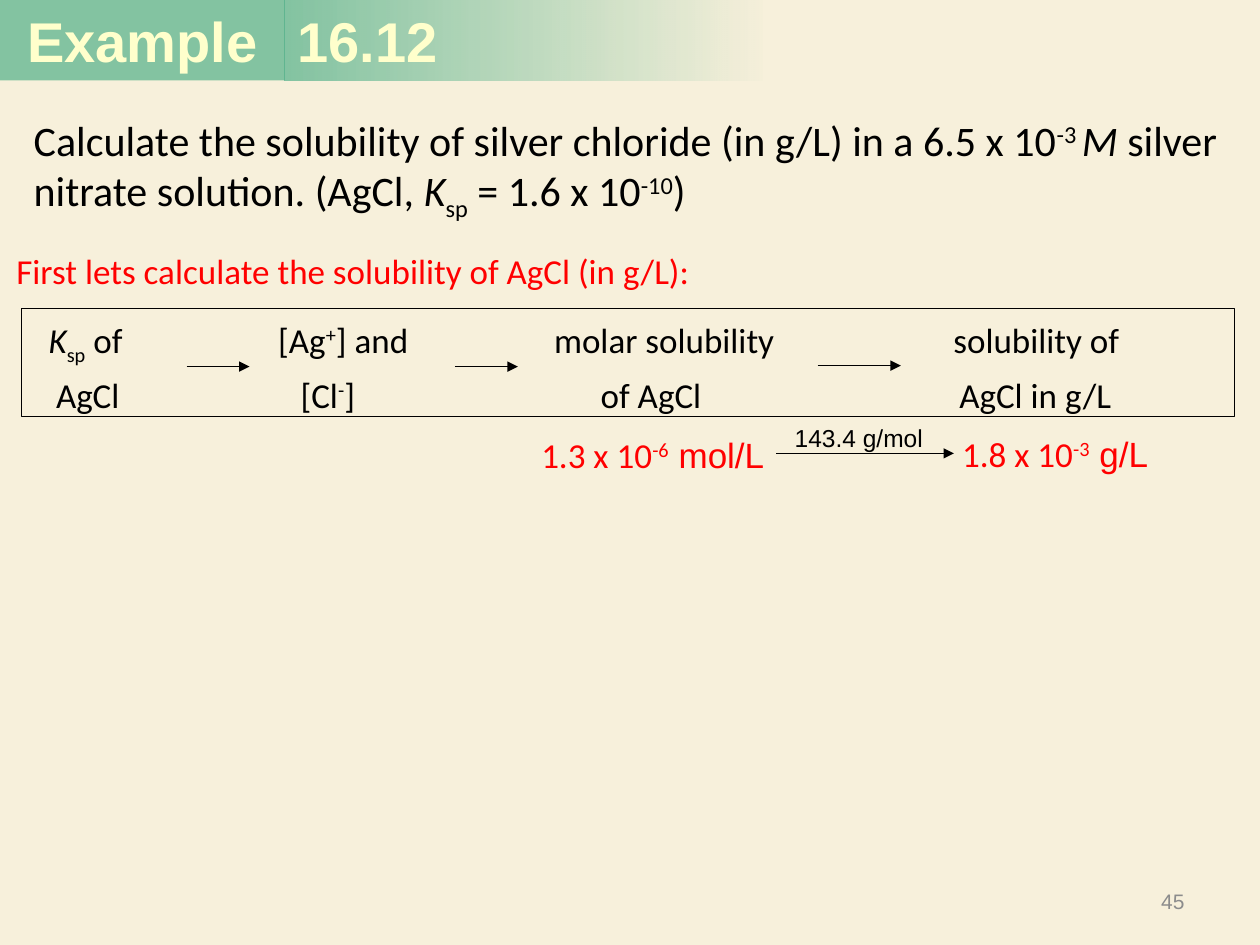
from lxml import etree
from pptx import Presentation
from pptx.dml.color import RGBColor
from pptx.enum.shapes import MSO_CONNECTOR as CONN, MSO_SHAPE as SHAPE
from pptx.enum.text import MSO_ANCHOR as ANCHOR, MSO_AUTO_SIZE as AUTO, PP_ALIGN as ALIGN
from pptx.oxml.ns import qn
from pptx.util import Cm, Pt

COLORS = {
    "paper": "F7F0DB", "band": "109769", "heading": "FFFFCC",
    "text": "000000", "answer": "FF0000", "number": "8C8C8C",
}
BASELINES = {"sup": "30000", "sub": "-25000"}


def rgb(name):
    return RGBColor.from_string(COLORS[name])


class ExampleSlide:
    """Holds the style and the current slide."""

    def __init__(self, prs):
        self.slide = prs.slides.add_slide(prs.slide_layouts[5])
        fill = self.slide.background.fill
        fill.solid()
        fill.fore_color.rgb = rgb("paper")

    def place(self, sp, box):
        sp.left, sp.top, sp.width, sp.height = (Cm(v) for v in box)

    def set_text(self, sp, lines, size, color="text", font="Calibri", bold=None,
                 align=ALIGN.LEFT, anchor=ANCHOR.TOP, wrap=True, tabs=()):
        """Each line is a list of (text, style[, font]) runs."""
        tf = sp.text_frame
        tf.word_wrap = wrap
        tf.auto_size = AUTO.NONE if wrap else AUTO.SHAPE_TO_FIT_TEXT
        tf.vertical_anchor = anchor
        for i, runs in enumerate(lines):
            p = tf.add_paragraph() if i else tf.paragraphs[0]
            p.alignment = align
            if i:
                p.space_before = Pt(4)
            if tabs:
                tab_list = etree.SubElement(p._p.get_or_add_pPr(), qn("a:tabLst"))
                for pos in tabs[i]:
                    etree.SubElement(tab_list, qn("a:tab"), pos=str(Cm(pos)), algn="l")
            for text, style, *own_font in runs:
                r = p.add_run()
                r.text = text
                r.font.name = own_font[0] if own_font else font
                r.font.size = Pt(size)
                r.font.bold = bold
                r.font.italic = style == "i" or None
                r.font.color.rgb = rgb(color)
                if style in BASELINES:
                    r._r.get_or_add_rPr().set("baseline", BASELINES[style])

    def text(self, box, lines, size, **style):
        sp = self.slide.shapes.add_textbox(*(Cm(v) for v in box))
        self.set_text(sp, lines, size, **style)
        return sp

    def rect(self, box):
        sp = self.slide.shapes.add_shape(SHAPE.RECTANGLE, *(Cm(v) for v in box))
        sp.shadow.inherit = False
        sp.fill.background()
        sp.line.fill.background()
        return sp

    def tint(self, sp, stops):
        """Fill with the band colour; stops are (position %, opacity %)."""
        sp.fill.solid()
        sp.fill.fore_color.rgb = rgb("band")
        solid = sp._element.spPr.find(qn("a:solidFill"))
        if len(stops) == 1:
            etree.SubElement(solid[0], qn("a:alpha"), val=str(stops[0][1] * 1000))
            return
        grad = etree.Element(qn("a:gradFill"), rotWithShape="1")
        stop_list = etree.SubElement(grad, qn("a:gsLst"))
        for pos, opacity in stops:
            gs = etree.SubElement(stop_list, qn("a:gs"), pos=str(pos * 1000))
            clr = etree.SubElement(gs, qn("a:srgbClr"), val=COLORS["band"])
            etree.SubElement(clr, qn("a:alpha"), val=str(opacity * 1000))
        etree.SubElement(grad, qn("a:lin"), ang="0", scaled="1")
        sp._element.spPr.replace(solid, grad)

    def heading(self, label, number):
        style = dict(size=32, color="heading", font="Arial", bold=True)
        sp = self.rect((0, 0, 5.74, 1.62))
        self.tint(sp, [(0, 50)])
        self.set_text(sp, [[(label, "")]], align=ALIGN.CENTER, **style)
        title = self.slide.shapes.title
        self.place(title, (5.74, 0, 9.68, 1.62))
        self.tint(title, [(0, 50), (50, 25), (100, 0)])
        self.set_text(title, [[(number, "")]], anchor=ANCHOR.MIDDLE, **style)

    def arrow(self, x1, x2, y):
        c = self.slide.shapes.add_connector(CONN.STRAIGHT, Cm(x1), Cm(y), Cm(x2), Cm(y))
        c.line.color.rgb = rgb("text")
        c.line.width = Pt(0.75)
        ln = c._element.spPr.find(qn("a:ln"))
        etree.SubElement(ln, qn("a:tailEnd"), type="triangle")
        etree.SubElement(c._element.spPr, qn("a:effectLst"))


def main():
    prs = Presentation()
    prs.slide_width, prs.slide_height = Cm(25.4), Cm(19.05)
    s = ExampleSlide(prs)

    # Heading and slide number
    s.heading("Example", "16.12")
    s.text((18.21, 17.65, 5.92, 1.02), [[("45", "")]], 12, color="number",
           font="Arial", align=ALIGN.RIGHT, anchor=ANCHOR.MIDDLE)

    # Problem statement
    sp = s.text((0.43, 2.11, 24.46, 2.51), [[
        ("Calculate the solubility of silver chloride (in g/L) in a 6.5 x 10", ""),
        ("-3 ", "sup"), ("M ", "i"), ("silver nitrate solution. (AgCl, ", ""),
        ("K", "i"), ("sp", "sub"), (" = 1.6 x 10", ""), ("-10", "sup"), (")", ""),
    ]], 24)
    sp.text_frame.margin_top = Cm(0.2)
    s.text((0.08, 4.9, 14.22, 1.12),
           [[("First lets calculate the solubility of AgCl (in g/L):", "")]],
           20, color="answer", wrap=False)

    # Solution path
    sp = s.rect((0.43, 6.22, 24.46, 2.18))
    sp.line.color.rgb = rgb("text")
    sp.line.width = Pt(0.75)
    sp.text_frame.margin_top = Cm(0.2)
    s.set_text(sp, [
        [("\tK", "i"), ("sp", "sub"), (" of\t[Ag", ""), ("+", "sup"),
         ("] and\tmolar solubility\tsolubility of", "")],
        [("\tAgCl\t[Cl", ""), ("-", "sup"), ("]\tof AgCl\tAgCl in g/L", "")],
    ], 20, tabs=[(0.3, 4.93, 10.49, 18.54), (0.45, 5.38, 11.43, 18.66)])
    for x1, x2, y in [(3.76, 5.03, 7.39), (9.17, 10.44, 7.39), (16.48, 18.16, 7.37)]:
        s.arrow(x1, x2, y)

    # Conversion to grams per litre
    for box, value, power, unit in [
        ((10.62, 8.61, 5.08, 1.12), "1.3 x 10", "-6", " mol/L"),
        ((19.1, 8.59, 4.34, 1.12), "1.8 x 10", "-3", " g/L"),
    ]:
        s.text(box, [[(value, ""), (power, "sup"), (unit, "", "Arial")]], 20,
               color="answer", align=ALIGN.CENTER, wrap=False)
    s.text((15.77, 8.41, 3.1, 0.86), [[("143.4 g/mol", "")]], 14, font="Arial", wrap=False)
    s.arrow(15.65, 19.23, 9.14)

    prs.save("out.pptx")


if __name__ == "__main__":
    main()
